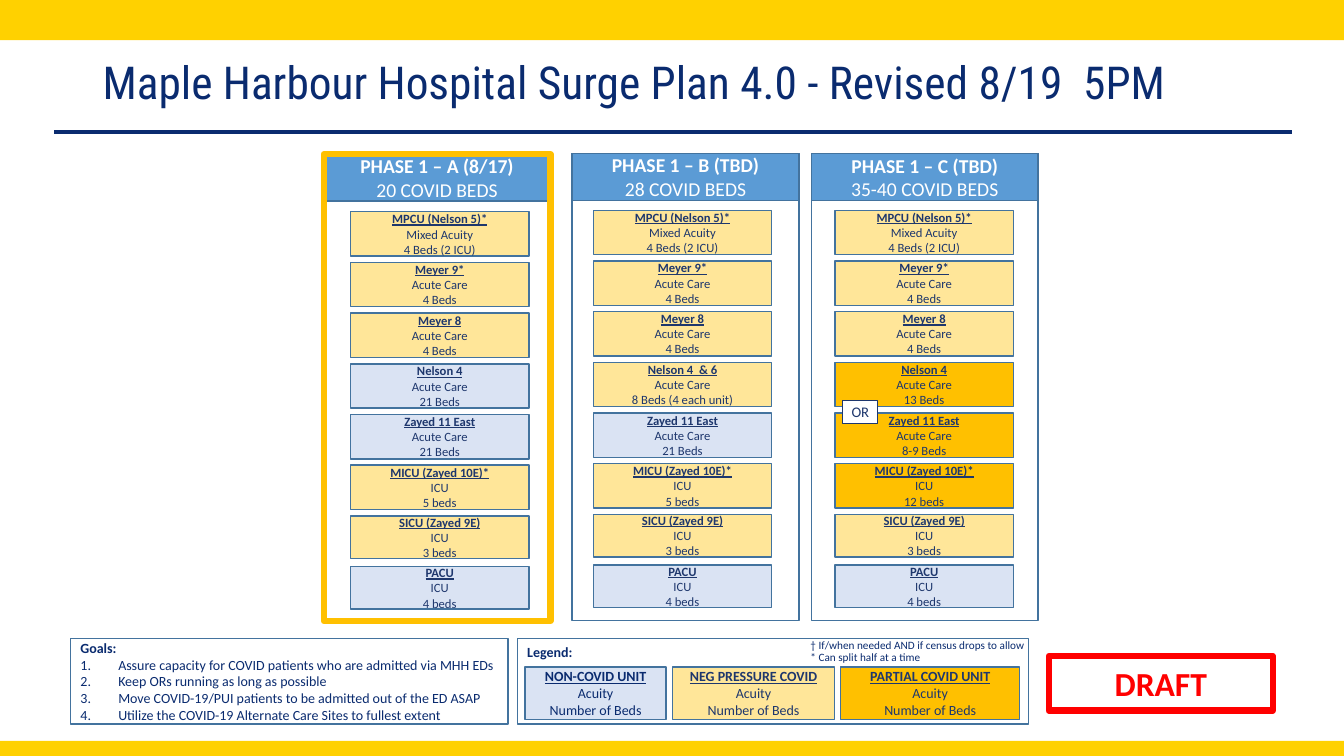
from lxml import etree
from pptx import Presentation
from pptx.dml import color
from pptx.enum import shapes, text
from pptx.oxml import ns
from pptx.util import Pt

NAVY, INK, EDGE = "0A2B6F", "1E376D", "43739E"
GOLD, SAND, PALE = "FFC000", "FFE699", "DAE3F3"
WHITE, RED, BAND = "FFFFFF", "FF0000", "FFD100"

deck = Presentation()
deck.slide_width, deck.slide_height = Pt(960), Pt(540)
slide = deck.slides.add_slide(deck.slide_layouts[6])


def tint(part, code):
    """Give a fill or a line one solid colour, or none."""
    fill = getattr(part, "fill", part)
    if code:
        fill.solid()
        fill.fore_color.rgb = color.RGBColor.from_string(code)
    else:
        fill.background()


def box(x, y, w, h, words="", fill=None, line=None, weight=1, size=9, ink=INK,
        face="Calibri", bold=True, under=False, align="CENTER", anchor="MIDDLE",
        space=None, inset=None, steps=False):
    """Draw a box; bold and under apply to its first line of text."""
    place = Pt(x), Pt(y), Pt(w), Pt(h)
    if fill or line:
        shape = slide.shapes.add_shape(shapes.MSO_SHAPE.RECTANGLE, *place)
        shape.shadow.inherit = False
        tint(shape, fill)
        tint(shape.line, line)
        if line:
            shape.line.width = Pt(weight)
    else:
        shape = slide.shapes.add_textbox(*place)
    if not words:
        return
    frame = shape.text_frame
    frame.word_wrap = True
    frame.vertical_anchor = getattr(text.MSO_ANCHOR, anchor)
    if inset is not None:
        frame.margin_left = frame.margin_right = Pt(inset)
        frame.margin_top = frame.margin_bottom = Pt(inset)
    for row, part in enumerate(words.split("\n")):
        para = frame.paragraphs[0] if row == 0 else frame.add_paragraph()
        para.alignment = getattr(text.PP_ALIGN, align)
        if space:
            para.line_spacing = space
        if steps and row:
            props = para._p.get_or_add_pPr()
            props.set("marL", str(Pt(27)))
            props.set("indent", str(Pt(-27)))
            etree.SubElement(props, ns.qn("a:buAutoNum"), type="arabicPeriod")
        run = para.add_run()
        run.text = part
        run.font.name, run.font.size = face, Pt(size)
        run.font.bold = bold and row == 0
        run.font.underline = under and row == 0
        tint(run.font, ink)


# Bands, title and rule
box(0, 0, 960, 28.8, fill=BAND)
box(0, 529.2, 960, 10.8, fill=BAND)
box(66.2, 28.8, 828, 63.4, "Maple Harbour Hospital Surge Plan 4.0 - Revised 8/19  5PM",
    size=32.4, ink=NAVY, face="Roboto Condensed", bold=False, align="LEFT", space=0.9)
rule = slide.shapes.add_connector(shapes.MSO_CONNECTOR.STRAIGHT,
                                  Pt(38.9), Pt(94.3), Pt(923), Pt(94.3))
tint(rule.line, NAVY)
rule.line.width = Pt(2.25)
etree.SubElement(rule._element.spPr, ns.qn("a:effectLst"))

# Units: name, care, then beds and fill in each phase
units = [
    ("MPCU (Nelson 5)*", "Mixed Acuity", ["4 Beds (2 ICU)"] * 3, [SAND] * 3),
    ("Meyer 9*", "Acute Care", ["4 Beds"] * 3, [SAND] * 3),
    ("Meyer 8", "Acute Care", ["4 Beds"] * 3, [SAND] * 3),
    ("Nelson 4", "Acute Care", ["21 Beds", "8 Beds (4 each unit)", "13 Beds"],
     [PALE, SAND, GOLD]),
    ("Zayed 11 East", "Acute Care", ["21 Beds", "21 Beds", "8-9 Beds"],
     [PALE, PALE, GOLD]),
    ("MICU (Zayed 10E)*", "ICU", ["5 beds", "5 beds", "12 beds"],
     [SAND, SAND, GOLD]),
    ("SICU (Zayed 9E)", "ICU", ["3 beds"] * 3, [SAND] * 3),
    ("PACU", "ICU", ["4 beds"] * 3, [PALE] * 3),
]

# Phases: heading, left and top of column, left and top of units, frame
phases = [
    ("PHASE 1 – A (8/17)\n20 COVID BEDS", 231.2, 110.2, 250.4, 151.3, GOLD, 4.5),
    ("PHASE 1 – B (TBD)\n28 COVID BEDS", 408.7, 109.7, 423.8, 150.2, EDGE, 1),
    ("PHASE 1 – C (TBD)\n35-40 COVID BEDS", 579.6, 109.8, 596.4, 150.2, EDGE, 1),
]
for col, (head, left, top, inner, first, edge, weight) in enumerate(phases):
    box(left, top, 162, 33.4, head, fill="5B9BD5", line=EDGE, size=14, ink=WHITE)
    box(left, top, 162, 333.4, line=edge, weight=weight)
    for row, (name, care, beds, fills) in enumerate(units):
        if name == "Nelson 4" and col == 1:
            name = "Nelson 4  & 6"
        box(inner, first + 36.2 * row, 127.4, 31.7 if row < 6 else 30.4,
            f"{name}\n{care}\n{beds[col]}", fill=fills[col], line=EDGE, under=True)
box(601.9, 286.4, 25.2, 15.8, "OR", fill=WHITE, line=INK, weight=0.75,
    size=10.5, bold=False, inset=1.5)

# Goals
box(50.4, 456, 312.5, 61.2, """Goals:
Assure capacity for COVID patients who are admitted via MHH EDs
Keep ORs running as long as possible
Move COVID-19/PUI patients to be admitted out of the ED ASAP
Utilize the COVID-19 Alternate Care Sites to fullest extent""",
    line=EDGE, size=10, ink=NAVY, align="LEFT", steps=True)

# Legend
box(369.5, 456, 365.2, 61.2, "Legend:", line=EDGE, size=10, ink=NAVY,
    align="LEFT", anchor="TOP")
box(571.8, 454.3, 267.8, 23.8,
    "† If/when needed AND if census drops to allow\n* Can split half at a time",
    size=8, ink=NAVY, bold=False, align="LEFT", anchor="TOP", space=Pt(8))
for left, wide, name, fill, ink in [
        (375, 100.9, "NON-COVID UNIT", PALE, NAVY),
        (480.3, 115.8, "NEG PRESSURE COVID", SAND, INK),
        (600.4, 128, "PARTIAL COVID UNIT", GOLD, INK)]:
    box(left, 476.6, wide, 37.2, f"{name}\nAcuity\nNumber of Beds",
        fill=fill, line=EDGE, size=10, ink=ink, under=True)

# Draft stamp
box(749.2, 468.6, 160, 39, "DRAFT", line=RED, weight=4.5, size=24, ink=RED)

deck.save("out.pptx")
